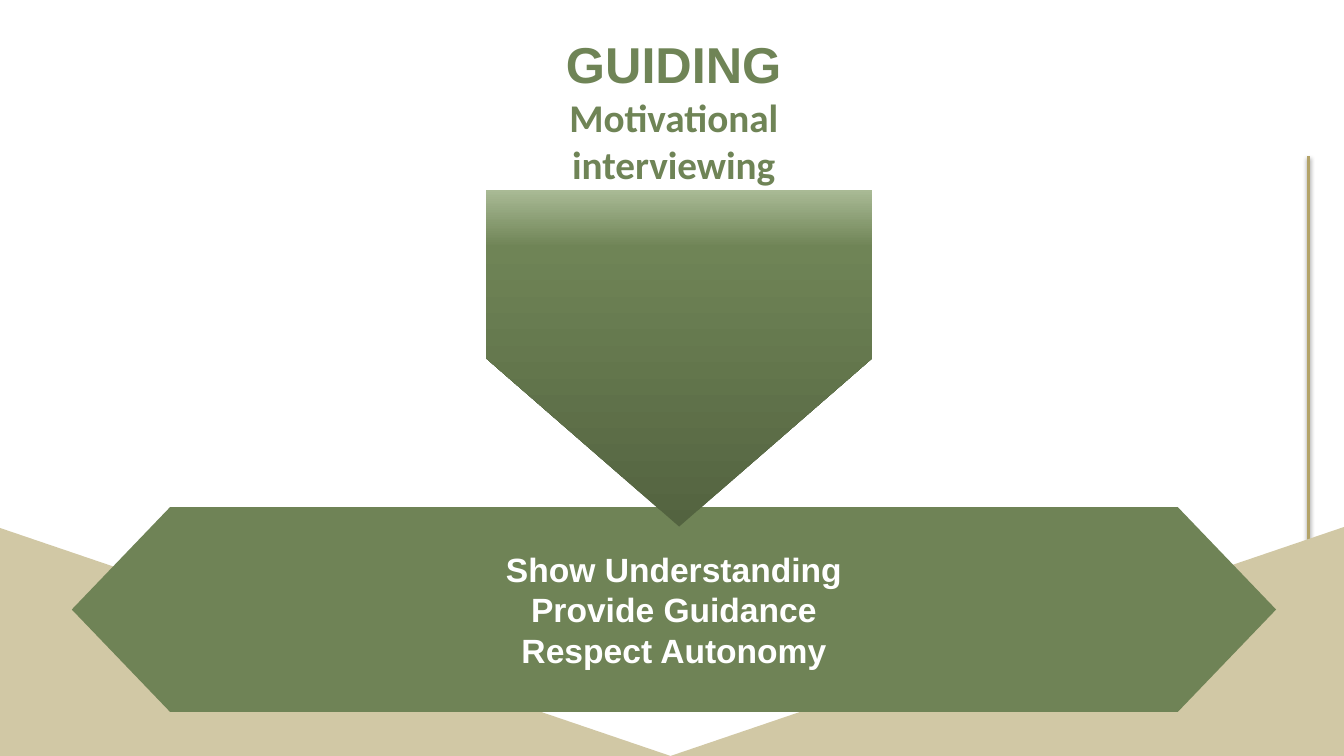
from copy import deepcopy
from dataclasses import dataclass

from lxml import etree
from pptx import Presentation
from pptx.dml.color import RGBColor
from pptx.enum.dml import MSO_THEME_COLOR
from pptx.enum.shapes import MSO_CONNECTOR, MSO_SHAPE
from pptx.enum.text import MSO_ANCHOR, MSO_AUTO_SIZE, PP_ALIGN
from pptx.oxml.ns import qn
from pptx.util import Cm, Pt

STRAIGHT = MSO_CONNECTOR.STRAIGHT
TRIANGLE, HEXAGON, PENTAGON = MSO_SHAPE.RIGHT_TRIANGLE, MSO_SHAPE.HEXAGON, MSO_SHAPE.PENTAGON
CENTER = PP_ALIGN.CENTER
TOP, MIDDLE = MSO_ANCHOR.TOP, MSO_ANCHOR.MIDDLE
NO_AUTOFIT = MSO_AUTO_SIZE.NONE
ACCENT = MSO_THEME_COLOR.ACCENT_1
TITLE_ONLY = 5


@dataclass(frozen=True)
class Theme:
    green: RGBColor = RGBColor(0x6F, 0x83, 0x56)
    title_green: RGBColor = RGBColor(0x6F, 0x84, 0x56)
    dark_green: RGBColor = RGBColor(0x53, 0x63, 0x40)
    pale_green: RGBColor = RGBColor(0xA9, 0xBA, 0x95)
    sand: RGBColor = RGBColor(0xD1, 0xC8, 0xA5)
    gold: RGBColor = RGBColor(0xB3, 0xA3, 0x69)
    white: RGBColor = RGBColor(0xFF, 0xFF, 0xFF)
    heading: Pt = Pt(36)
    subheading: Pt = Pt(28)
    body: Pt = Pt(24)
    rule: Pt = Pt(2)


THEME = Theme()


def write_paragraphs(text_frame, lines, anchor):
    """Write centred bold lines, each a (text, size, font name, colour) tuple."""
    frame_format = {"word_wrap": True, "auto_size": NO_AUTOFIT, "vertical_anchor": anchor}
    for name, value in frame_format.items():
        setattr(text_frame, name, value)
    for index, (text, size, font_name, color) in enumerate(lines):
        paragraph = text_frame.add_paragraph() if index else text_frame.paragraphs[0]
        paragraph.alignment = CENTER
        run = paragraph.add_run()
        run.text = text
        for name, value in {"size": size, "name": font_name, "bold": True}.items():
            setattr(run.font, name, value)
        run.font.color.rgb = color


def add_plain_shape(slide, kind, box, color):
    """Add a filled shape without outline or shadow; box is in centimetres."""
    shape = slide.shapes.add_shape(kind, *map(Cm, box))
    shape.shadow.inherit = False
    shape.line.fill.background()
    shape.fill.solid()
    shape.fill.fore_color.rgb = color
    return shape


def add_side_rule(slide, x, top, bottom):
    rule = slide.shapes.add_connector(STRAIGHT, Cm(x), Cm(top), Cm(x), Cm(bottom))
    rule.line.color.rgb = THEME.gold
    rule.line.width = THEME.rule
    effects = etree.SubElement(rule._element.spPr, qn("a:effectLst"))
    shadow = etree.SubElement(effects, qn("a:outerShdw"), blurRad=str(Pt(3.1)),
                              dist=str(Pt(1.6)), dir="5400000", rotWithShape="0")
    color = etree.SubElement(shadow, qn("a:srgbClr"), val="000000")
    etree.SubElement(color, qn("a:alpha"), val="38000")


def add_valley(slide, box):
    """Place two mirrored triangles that meet at the bottom middle of the box."""
    left, top, width, height = box
    half = width / 2
    for side in range(2):
        slope = add_plain_shape(slide, TRIANGLE, (left + side * half, top, half, height), THEME.sand)
        if side:
            slope._element.spPr.xfrm.set("flipH", "1")


def add_principles(slide, box, principles):
    banner = add_plain_shape(slide, HEXAGON, box, THEME.green)
    banner.adjustments[0] = 0.48
    lines = [(text, THEME.body, "Arial", THEME.white) for text in principles]
    write_paragraphs(banner.text_frame, lines, MIDDLE)


def add_down_arrow(slide, box):
    """Place a pentagon, turned to point down, so that it fills the box."""
    left, top, width, height = box
    shift = (width - height) / 2
    arrow = add_plain_shape(slide, PENTAGON, (left + shift, top - shift, height, width), THEME.green)
    arrow.rotation = 90
    arrow.fill.gradient()
    arrow.fill.gradient_angle = 180
    stop_list = arrow._element.spPr.find(qn("a:gradFill")).find(qn("a:gsLst"))
    stop_list.append(deepcopy(stop_list[-1]))
    colors = (THEME.dark_green, THEME.title_green, THEME.pale_green)
    for stop, position, color in zip(arrow.fill.gradient_stops, (0, 0.83, 1), colors):
        stop.position = position
        stop.color.theme_color = ACCENT
        stop.color.rgb = color


def add_title(slide, box, heading, subheading):
    title = slide.shapes.title
    for name, value in zip(("left", "top", "width", "height"), box):
        setattr(title, name, Cm(value))
    lines = [(heading, THEME.heading, "Arial", THEME.title_green),
             (subheading, THEME.subheading, "Calibri", THEME.title_green)]
    write_paragraphs(title.text_frame, lines, TOP)


def build_guiding_slide(presentation):
    slide = presentation.slides.add_slide(presentation.slide_layouts[TITLE_ONLY])
    add_side_rule(slide, 32.97, 3.94, 17.27)
    add_valley(slide, (-0.13, 13.26, 34.06, 5.79))
    add_principles(slide, (1.81, 12.78, 30.35, 5.16),
                   ("Show Understanding", "Provide Guidance", "Respect Autonomy"))
    add_down_arrow(slide, (12.25, 4.79, 9.73, 8.48))
    add_title(slide, (11.66, 0.71, 10.64, 4.08), "GUIDING", "Motivational interviewing")


def main():
    presentation = Presentation()
    presentation.slide_width, presentation.slide_height = Cm(33.87), Cm(19.05)
    build_guiding_slide(presentation)
    presentation.save("out.pptx")


if __name__ == "__main__":
    main()
